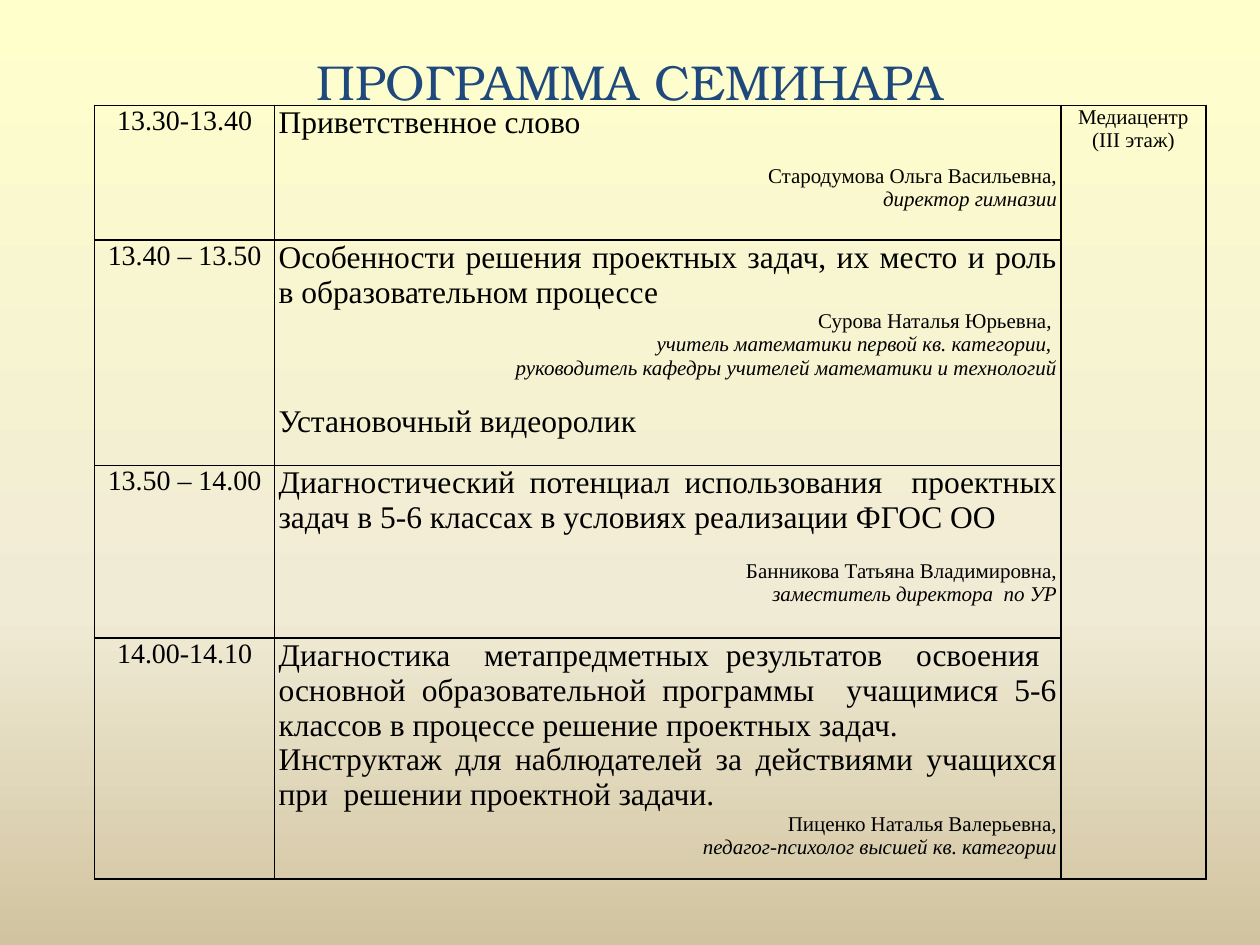
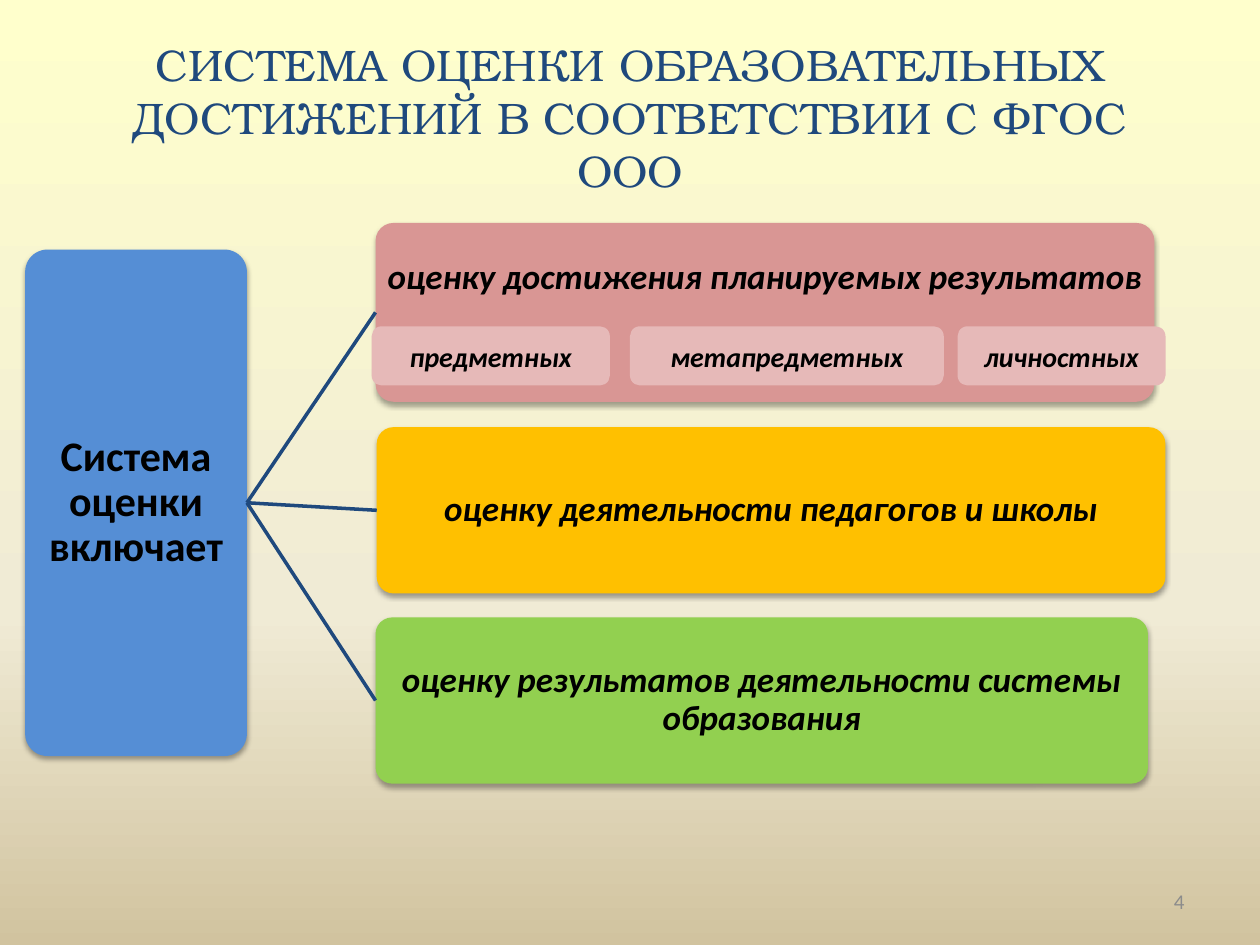
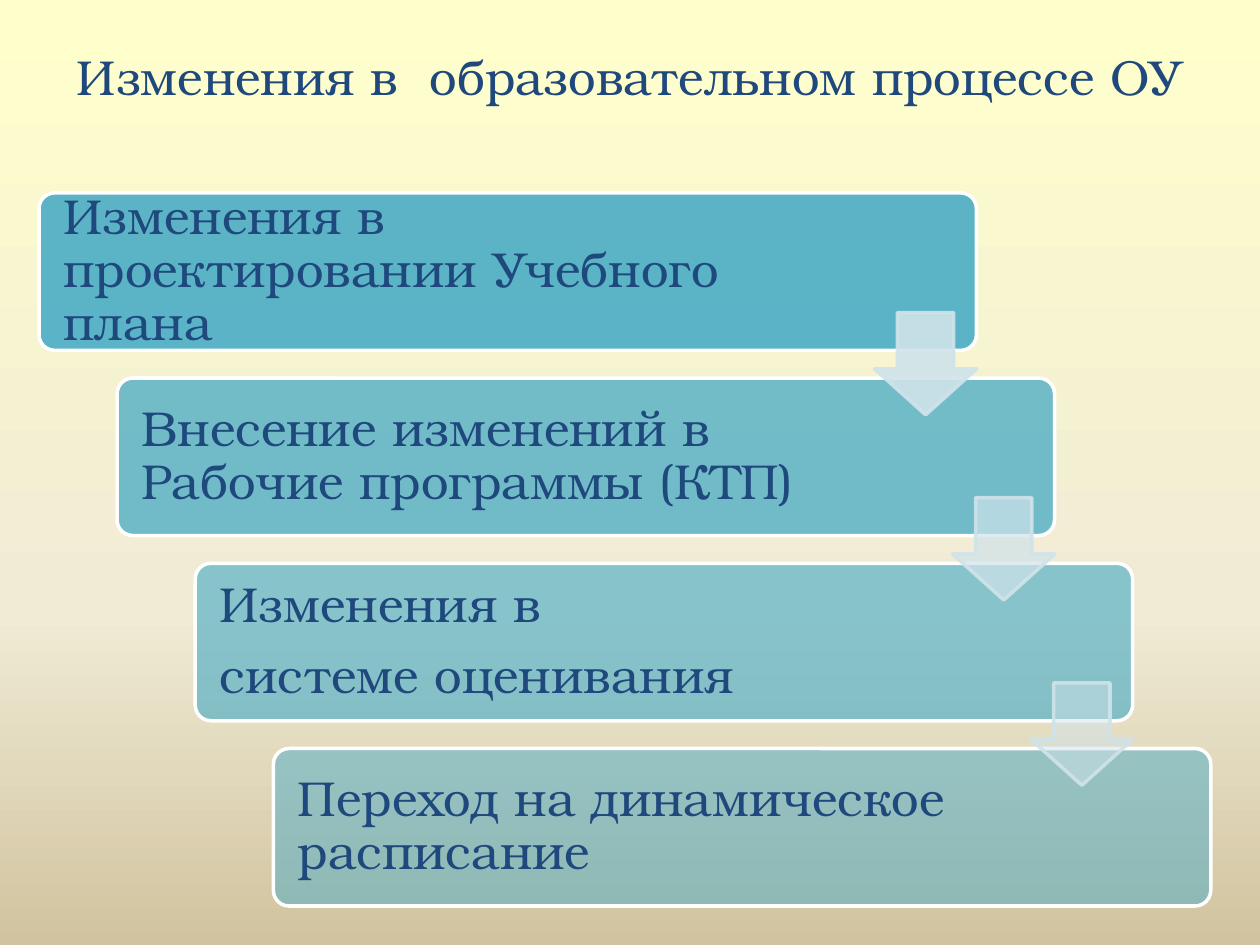
from dataclasses import dataclass
from functools import partial

from lxml.etree import SubElement
from pptx import Presentation
from pptx.dml.color import RGBColor
from pptx.enum.shapes import MSO_CONNECTOR, MSO_SHAPE
from pptx.enum.text import MSO_ANCHOR, PP_ALIGN
from pptx.oxml.ns import qn
from pptx.util import Pt

COLORS = {
    "navy": "1F497D",
    "black": "000000",
    "white": "FFFFFF",
    "gray": "8C8C8C",
    "blue": "558ED5",
    "rose": "D99694",
    "light_rose": "E6B9B8",
    "amber": "FFC000",
    "green": "92D050",
    "teal": "4BACC6",
    "pale_blue": "D0E3EA",
}
BACKGROUND_STOPS = [(0, "FFFFCC"), (65, "F0EBD5"), (100, "D1C39F")]
NAMESPACES = {"a": "http://schemas.openxmlformats.org/drawingml/2006/main"}
TITLE_FONT = "TeX Gyre Bonum"
BODY_FONT = "Calibri"
TABLE_FONT = "Times New Roman"


@dataclass(frozen=True)
class Line:
    text: str
    size: float
    font: str = BODY_FONT
    color: str = "black"
    bold: bool = False
    italic: bool = False
    align: PP_ALIGN = PP_ALIGN.CENTER
    spacing: float = 1.0
    before: float = 0
    after: float = 0


@dataclass(frozen=True)
class Box:
    left: float
    top: float
    width: float
    height: float

    def lengths(self) -> tuple:
        return Pt(self.left), Pt(self.top), Pt(self.width), Pt(self.height)


@dataclass(frozen=True)
class Margins:
    left: float = 7.2
    top: float = 3.6
    right: float = 7.2
    bottom: float = 3.6


@dataclass(frozen=True)
class Session:
    time: str
    height: float
    lines: list


@dataclass(frozen=True)
class Branch:
    text: str
    box: Box
    color: str
    bottom_margin: float = 1


@dataclass(frozen=True)
class Chip:
    text: str
    left: float
    width: float


@dataclass(frozen=True)
class Step:
    texts: list
    opacity: int


table_line = partial(Line, font=TABLE_FONT)
topic = partial(table_line, size=18, align=PP_ALIGN.JUSTIFY)
speaker = partial(table_line, size=12, align=PP_ALIGN.RIGHT)
role = partial(speaker, italic=True)
branch_line = partial(Line, size=20, bold=True, italic=True, spacing=0.9)
step_line = partial(Line, size=28, font=TITLE_FONT, color="navy",
                    align=PP_ALIGN.LEFT, spacing=0.9, after=10)

SESSIONS = [
    Session("13.30-13.40", 77, [
        topic("Приветственное слово"),
        speaker("Стародумова Ольга Васильевна,", before=14),
        role("директор гимназии"),
    ]),
    Session("13.40 – 13.50", 128.9, [
        topic("Особенности решения проектных задач, их место и роль в образовательном процессе"),
        speaker("Сурова Наталья Юрьевна, "),
        role("учитель математики первой кв. категории, "),
        role("руководитель кафедры учителей математики и технологий"),
        topic("Установочный видеоролик", before=14),
    ]),
    Session("13.50 – 14.00", 98.6, [
        topic("Диагностический потенциал использования  проектных задач в 5-6 классах "
              "в условиях реализации ФГОС ОО"),
        speaker("Банникова Татьяна Владимировна,", before=14),
        role("заместитель директора  по УР"),
    ]),
    Session("14.00-14.10", 137.5, [
        topic("Диагностика  метапредметных результатов  освоения  основной образовательной "
              "программы  учащимися 5-6 классов в процессе решение проектных задач."),
        topic("Инструктаж для наблюдателей за действиями учащихся при  решении проектной задачи."),
        speaker("Пиценко Наталья Валерьевна,"),
        role("педагог-психолог высшей кв. категории"),
    ]),
]
VENUE = [table_line("Медиацентр", 12), table_line("(III этаж)", 12)]
COLUMN_WIDTHS = [103, 449.3, 82.8]

BRANCHES = [
    Branch("оценку достижения планируемых результатов",
           Box(214.6, 127.4, 445, 102.2), "rose", 40),
    Branch("оценку деятельности педагогов и школы",
           Box(215.3, 244.1, 450.7, 95), "amber"),
    Branch("оценку результатов деятельности системы образования",
           Box(214.6, 352.8, 441.4, 95), "green"),
]
CHIPS = [
    Chip("предметных", 212.4, 136.1),
    Chip("метапредметных", 360, 179.3),
    Chip("личностных", 547.2, 118.8),
]

STEPS = [
    Step(["Изменения в проектировании Учебного плана"], 90),
    Step(["Внесение изменений в Рабочие программы (КТП)"], 77),
    Step(["Изменения в", "системе оценивания"], 63),
    Step(["Переход на динамическое расписание"], 50),
]
ARROW_OPACITIES = [90, 70, 50]
STEP_RIGHT, STEP_DOWN = 44.64, 105.84


def rgb(name: str) -> RGBColor:
    return RGBColor.from_string(COLORS[name])


def write_text(frame, lines: list, margins: Margins = Margins()) -> None:
    frame.word_wrap = True
    frame.vertical_anchor = MSO_ANCHOR.MIDDLE
    frame.margin_left, frame.margin_top = Pt(margins.left), Pt(margins.top)
    frame.margin_right, frame.margin_bottom = Pt(margins.right), Pt(margins.bottom)
    write_lines(frame, lines)


def write_lines(frame, lines: list) -> None:
    for index, line in enumerate(lines):
        paragraph = frame.add_paragraph() if index else frame.paragraphs[0]
        paragraph.text = line.text
        paragraph.alignment = line.align
        paragraph.line_spacing = line.spacing
        paragraph.space_before = Pt(line.before)
        paragraph.space_after = Pt(line.after)
        font = paragraph.font
        font.name, font.size = line.font, Pt(line.size)
        font.bold, font.italic = line.bold, line.italic
        font.color.rgb = rgb(line.color)


def add_text(slide, box: Box, line: Line, margins: Margins = Margins()) -> None:
    write_text(slide.shapes.add_textbox(*box.lengths()).text_frame, [line], margins)


def add_title(slide, text: str, box: Box, size: float = 28,
              margins: Margins = Margins()) -> None:
    add_text(slide, box, Line(text, size, TITLE_FONT, "navy"), margins)


def add_block(slide, kind: MSO_SHAPE, box: Box, color: str, adjustments: tuple = ()):
    shape = slide.shapes.add_shape(kind, *box.lengths())
    shape.shadow.inherit = False
    shape.fill.solid()
    shape.fill.fore_color.rgb = rgb(color)
    shape.line.fill.background()
    for index, value in enumerate(adjustments):
        shape.adjustments[index] = value
    return shape


def outline(shape, color: str) -> None:
    shape.line.color.rgb = rgb(color)
    shape.line.width = Pt(2)


def set_opacity(shape, fill_tag: str, percent: int) -> None:
    color = shape.element.spPr.find(f"{fill_tag}/a:srgbClr", namespaces=NAMESPACES)
    SubElement(color, qn("a:alpha"), val=str(percent * 1000))


def add_shadow(shape) -> None:
    effects = shape.element.spPr.find(qn("a:effectLst"))
    shadow = SubElement(effects, qn("a:outerShdw"), blurRad=str(Pt(3.1)),
                        dist=str(Pt(1.8)), dir="5400000", rotWithShape="0")
    color = SubElement(shadow, qn("a:srgbClr"), val=COLORS["black"])
    SubElement(color, qn("a:alpha"), val="35000")


def set_background(master) -> None:
    fill = master.background.fill
    fill.gradient()
    fill.gradient_angle = 270
    stops = next(master.element.iter(qn("a:gsLst")))
    for stop in list(stops):
        stops.remove(stop)
    for position, color in BACKGROUND_STOPS:
        stop = SubElement(stops, qn("a:gs"), pos=str(position * 1000))
        SubElement(stop, qn("a:srgbClr"), val=color)


def style_cell(cell, side_margin: float) -> None:
    cell.margin_left = cell.margin_right = Pt(side_margin)
    cell.margin_top = cell.margin_bottom = Pt(0)
    properties = cell._tc.get_or_add_tcPr()
    for side in ("L", "R", "T", "B"):
        border = SubElement(properties, qn(f"a:ln{side}"), w=str(Pt(1)))
        fill = SubElement(border, qn("a:solidFill"))
        SubElement(fill, qn("a:srgbClr"), val=COLORS["black"])
    cell.fill.background()


def build_program(slide) -> None:
    add_title(slide, "ПРОГРАММА СЕМИНАРА", Box(36, 21.6, 648, 49.7))
    box = Box(54, 60.2, sum(COLUMN_WIDTHS), sum(session.height for session in SESSIONS))
    table = slide.shapes.add_table(len(SESSIONS), len(COLUMN_WIDTHS), *box.lengths()).table
    table.first_row = table.horz_banding = False
    for column, width in zip(table.columns, COLUMN_WIDTHS):
        column.width = Pt(width)
    for index, session in enumerate(SESSIONS):
        table.rows[index].height = Pt(session.height)
        for column, margin in enumerate((1.5, 2.2, 1.5)):
            style_cell(table.cell(index, column), margin)
        write_lines(table.cell(index, 0).text_frame, [table_line(session.time, 16)])
        write_lines(table.cell(index, 1).text_frame, session.lines)
    venue = table.cell(0, 2)
    venue.merge(table.cell(len(SESSIONS) - 1, 2))
    write_lines(venue.text_frame, VENUE)


def connect(slide, start, end) -> None:
    connector = slide.shapes.add_connector(MSO_CONNECTOR.STRAIGHT, 0, 0, 0, 0)
    connector.begin_connect(start, 3)
    connector.end_connect(end, 1)
    outline(connector, "navy")
    SubElement(connector.element.spPr, qn("a:effectLst"))


def build_assessment(slide) -> None:
    add_title(slide, "СИСТЕМА ОЦЕНКИ ОБРАЗОВАТЕЛЬНЫХ ДОСТИЖЕНИЙ В СООТВЕТСТВИИ С ФГОС ООО",
              Box(36, 21.6, 648, 90), 25.2)
    root = add_block(slide, MSO_SHAPE.ROUNDED_RECTANGLE,
                     Box(14.4, 142.6, 126.7, 289.4), "blue", (0.1,))
    add_shadow(root)
    write_text(root.text_frame, [Line("Система оценки включает", 24, bold=True, spacing=0.9)],
               Margins(5, 5, 5, 5))
    for branch in BRANCHES:
        shape = add_block(slide, MSO_SHAPE.ROUNDED_RECTANGLE, branch.box, branch.color, (0.1,))
        add_shadow(shape)
        write_text(shape.text_frame, [branch_line(branch.text)],
                   Margins(3.6, 1, 3.6, branch.bottom_margin))
        connect(slide, root, shape)
    for chip in CHIPS:
        shape = add_block(slide, MSO_SHAPE.ROUNDED_RECTANGLE,
                          Box(chip.left, 186.5, chip.width, 33.8), "light_rose")
        write_text(shape.text_frame, [Line(chip.text, 16, bold=True, italic=True)])
    add_text(slide, Box(516.2, 500.4, 167.8, 28.8),
             Line("4", 12, color="gray", align=PP_ALIGN.RIGHT))


def build_changes(slide) -> None:
    add_title(slide, "Изменения в  образовательном процессе ОУ",
              Box(36, 16.6, 648, 84.2), margins=Margins(bottom=33.6))
    for index, step in enumerate(STEPS):
        box = Box(22.3 + index * STEP_RIGHT, 110.2 + index * STEP_DOWN, 535.7, 90)
        shape = add_block(slide, MSO_SHAPE.ROUNDED_RECTANGLE, box, "teal", (0.1,))
        outline(shape, "white")
        set_opacity(shape, "a:solidFill", step.opacity)
        write_text(shape.text_frame, [step_line(text) for text in step.texts],
                   Margins(11.4, 0, 110, 0))
    for index, opacity in enumerate(ARROW_OPACITIES):
        box = Box(499.7 + index * STEP_RIGHT, 178.6 + index * STEP_DOWN, 58.5, 58.5)
        arrow = add_block(slide, MSO_SHAPE.DOWN_ARROW, box, "pale_blue")
        arrow.adjustments[0], arrow.adjustments[1] = 0.55, 0.45
        outline(arrow, "pale_blue")
        set_opacity(arrow, "a:solidFill", opacity)
        set_opacity(arrow, "a:ln/a:solidFill", 90)


def main() -> None:
    presentation = Presentation()
    presentation.slide_width, presentation.slide_height = Pt(720), Pt(540)
    set_background(presentation.slide_master)
    for build in (build_program, build_assessment, build_changes):
        build(presentation.slides.add_slide(presentation.slide_layouts[6]))
    presentation.save("out.pptx")


if __name__ == "__main__":
    main()
